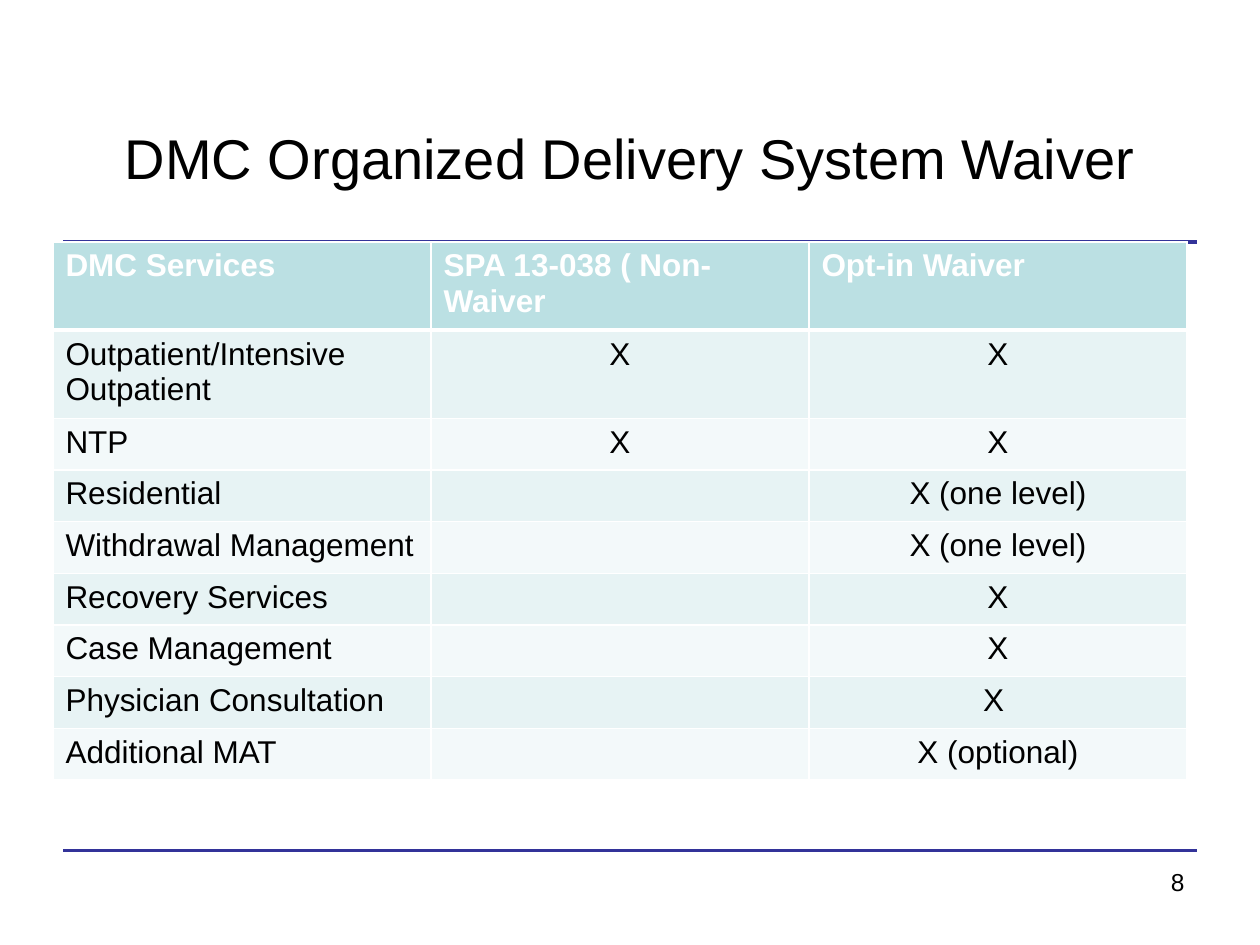
from dataclasses import dataclass

from lxml import etree
from pptx import Presentation
from pptx.dml.color import RGBColor
from pptx.enum.shapes import MSO_CONNECTOR
from pptx.enum.text import MSO_ANCHOR, PP_ALIGN
from pptx.oxml.ns import qn
from pptx.util import Inches, Pt

LEFT, CENTER, RIGHT = PP_ALIGN.LEFT, PP_ALIGN.CENTER, PP_ALIGN.RIGHT
TOP, MIDDLE = MSO_ANCHOR.TOP, MSO_ANCHOR.MIDDLE
STRAIGHT = MSO_CONNECTOR.STRAIGHT


@dataclass(frozen=True)
class Theme:
    font: str = "Arial"
    text: str = "000000"
    white: str = "FFFFFF"
    rule: str = "333399"
    header: str = "BBE0E3"
    bands: tuple = ("E7F3F4", "F3F9FA")
    title_size: int = 32
    table_size: int = 18
    number_size: int = 14


THEME = Theme()

SERVICES = [
    ("DMC Services", "SPA 13-038 ( Non-Waiver", "Opt-in Waiver"),
    ("Outpatient/Intensive Outpatient", "X", "X"),
    ("NTP", "X", "X"),
    ("Residential", "", "X (one level)"),
    ("Withdrawal Management", "", "X (one level)"),
    ("Recovery Services", "", "X"),
    ("Case Management", "", "X"),
    ("Physician Consultation", "", "X "),
    ("Additional MAT", "", "X (optional)"),
]


def style_paragraph(p, size, color, align, bold=False):
    p.alignment = align
    p.font.name = THEME.font
    p.font.size = Pt(size)
    p.font.bold = bold
    p.font.color.rgb = RGBColor.from_string(color)


def add_text(slide, text, left, top, width, height, size, align, anchor):
    sp = slide.shapes.add_textbox(Inches(left), Inches(top), Inches(width), Inches(height))
    tf = sp.text_frame
    tf.word_wrap = True
    tf.vertical_anchor = anchor
    tf.text = text
    style_paragraph(tf.paragraphs[0], size, THEME.text, align)


def add_rule(slide, y):
    line = slide.shapes.add_connector(STRAIGHT, Inches(0.5), Inches(y), Inches(9.5), Inches(y))
    line.line.color.rgb = RGBColor.from_string(THEME.rule)
    line.line.width = Pt(2.25)
    etree.SubElement(line._element.spPr, qn("a:effectLst"))


def set_borders(cell, top, bottom):
    tc_pr = cell._tc.get_or_add_tcPr()
    for side, width in (("L", 1), ("R", 1), ("T", top), ("B", bottom)):
        ln = etree.SubElement(tc_pr, qn(f"a:ln{side}"), w=str(Pt(width)))
        fill = etree.SubElement(ln, qn("a:solidFill"))
        etree.SubElement(fill, qn("a:srgbClr"), val=THEME.white)


def style_cell(cell, row, col):
    is_header = row == 0
    set_borders(cell, 3 if row == 1 else 1, 3 if is_header else 1)
    cell.fill.solid()
    fill = THEME.header if is_header else THEME.bands[(row - 1) % 2]
    cell.fill.fore_color.rgb = RGBColor.from_string(fill)
    color = THEME.white if is_header else THEME.text
    align = LEFT if is_header or col == 0 else CENTER
    style_paragraph(cell.text_frame.paragraphs[0], THEME.table_size, color, align, is_header)


def add_services_table(slide, rows, left, top, col_width, row_height):
    n_rows, n_cols = len(rows), len(rows[0])
    frame = slide.shapes.add_table(
        n_rows, n_cols, Inches(left), Inches(top),
        Inches(col_width * n_cols), Inches(row_height * n_rows))
    table = frame.table
    for r, values in enumerate(rows):
        for c, value in enumerate(values):
            cell = table.cell(r, c)
            cell.text = value
            style_cell(cell, r, c)


def main():
    prs = Presentation()
    prs.slide_width, prs.slide_height = Inches(10), Inches(7.5)
    slide = prs.slides.add_slide(prs.slide_layouts[6])
    for y in (6.75, 1.92):
        add_rule(slide, y)
    add_text(slide, "DMC Organized Delivery System Waiver", 0.5, 0.75, 9, 1,
             THEME.title_size, CENTER, MIDDLE)
    add_services_table(slide, SERVICES, 0.42, 1.92, 3, 0.41)
    add_text(slide, "8", 7.17, 6.83, 2.33, 0.52, THEME.number_size, RIGHT, TOP)
    prs.save("out.pptx")


if __name__ == "__main__":
    main()
